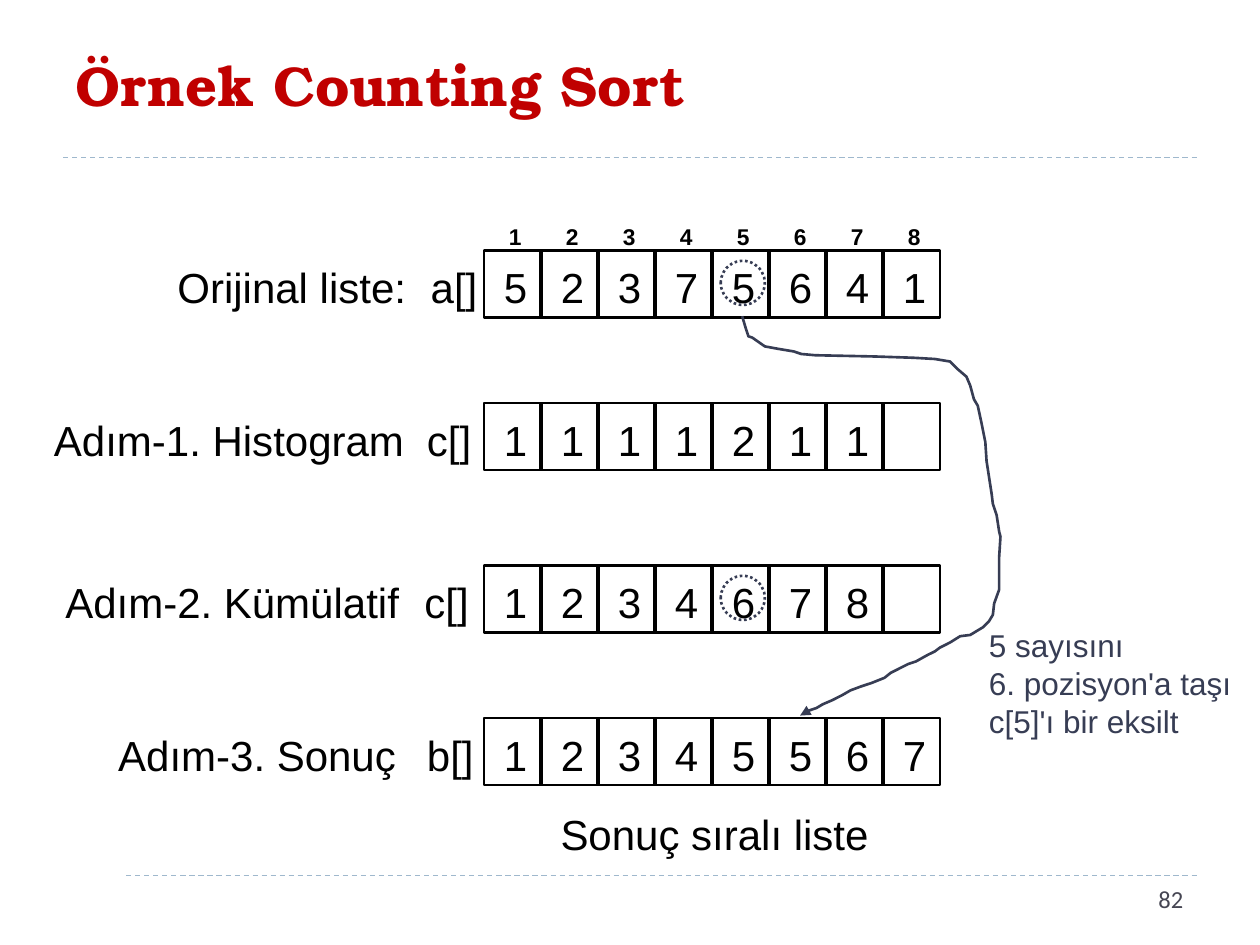
import pptx
import pptx.util
import pptx.dml.color
import pptx.enum.dml
import pptx.enum.shapes
import pptx.enum.text
import pptx.oxml.ns
from lxml import etree

Inches, Pt = pptx.util.Inches, pptx.util.Pt
DASH = pptx.enum.dml.MSO_LINE
SHAPE = pptx.enum.shapes.MSO_SHAPE
ALIGN = pptx.enum.text.PP_ALIGN
INK, NAVY = "000000", "373D54"
COLS, LEFT, CELL_W, CELL_H = 8, 3.84, 3.62 / 8, 0.53

# label, label left, label width, array name, name left, row top, values
ROWS = [
    ("Orijinal liste:", 1.31, 2.02, "a[]", 3.32, 1.99, "52375641"),
    ("Adım-1. Histogram", 0.33, 2.97, "c[]", 3.29, 3.20, "1111211"),
    ("Adım-2. Kümülatif", 0.42, 2.86, "c[]", 3.27, 4.49, "1234678"),
    ("Adım-3. Sonuç", 0.84, 2.41, "b[]", 3.29, 5.70, "12345567"),
]
MOVE_PATH = [
    (5.89, 2.51), (5.92, 2.61), (5.94, 2.67), (5.97, 2.68), (6.07, 2.75),
    (6.18, 2.77), (6.30, 2.79), (6.36, 2.81), (6.47, 2.82), (6.94, 2.83),
    (7.25, 2.84), (7.42, 2.85), (7.54, 2.87), (7.60, 2.93), (7.67, 2.99),
    (7.70, 3.06), (7.73, 3.17), (7.76, 3.22), (7.79, 3.36), (7.82, 3.51),
    (7.83, 3.66), (7.85, 3.79), (7.87, 3.92), (7.88, 4.00), (7.91, 4.09),
    (7.93, 4.22), (7.94, 4.26), (7.93, 4.42), (7.93, 4.68), (7.89, 4.79),
    (7.88, 4.88), (7.85, 4.93), (7.80, 4.98), (7.70, 5.04), (7.62, 5.05),
    (7.54, 5.10), (7.46, 5.14), (7.42, 5.17), (7.36, 5.20), (7.27, 5.25),
    (7.21, 5.27), (7.15, 5.30), (7.07, 5.34), (7.02, 5.38), (6.92, 5.42),
    (6.83, 5.45), (6.75, 5.48), (6.68, 5.52), (6.60, 5.56), (6.53, 5.59),
    (6.48, 5.62), (6.42, 5.64), (6.36, 5.66), (6.35, 5.68),
]


def rgb(hex_code):
    return pptx.dml.color.RGBColor.from_string(hex_code)


def style_font(p, size, color=INK, name="Arial", bold=False):
    p.font.size, p.font.name, p.font.bold = Pt(size), name, bold
    p.font.color.rgb = rgb(color)


def style_line(line, color, width, dash=None):
    line.color.rgb, line.width = rgb(color), Pt(width)
    if dash is not None:
        line.dash_style = dash


def add_text(s, text, x, y, w, h, size=24, color=INK, name="Arial",
             bold=False, align=ALIGN.LEFT, wrap=False):
    tf = s.shapes.add_textbox(Inches(x), Inches(y), Inches(w), Inches(h)).text_frame
    tf.word_wrap = wrap
    if not wrap:
        tf.auto_size = pptx.enum.text.MSO_AUTO_SIZE.SHAPE_TO_FIT_TEXT
    tf.text = text
    for p in tf.paragraphs:
        p.alignment = align
        style_font(p, size, color, name, bold)


def add_outline(s, kind, x, y, w, h, color, width, dash=None):
    sp = s.shapes.add_shape(kind, Inches(x), Inches(y), Inches(w), Inches(h))
    sp.shadow.inherit = False
    sp.fill.background()
    style_line(sp.line, color, width, dash)
    return sp


def add_line(s, x1, y1, x2, y2, color, width, dash=None):
    line = s.shapes.add_connector(pptx.enum.shapes.MSO_CONNECTOR.STRAIGHT,
                                  Inches(x1), Inches(y1), Inches(x2), Inches(y2))
    etree.SubElement(line._element.spPr, pptx.oxml.ns.qn("a:effectLst"))
    style_line(line.line, color, width, dash)
    return line


def add_frame(s, w, h):
    """Dashed rules, the corner block, title and page number."""
    for y in (6.95, 1.25):
        add_line(s, 0.05 * w, y, 0.95 * w, y, "9FB8CD", 0.75, DASH.DASH)
    corner = s.shapes.add_shape(SHAPE.RECTANGLE, Inches(0.35), Inches(h - 0.68),
                                Inches(0.63), Inches(0.63))
    corner.shadow.inherit = False
    corner.fill.solid()
    corner.fill.fore_color.rgb = rgb("FFFFFF")
    corner.line.fill.background()

    title = s.shapes.title
    title.left, title.top = Inches(0.05 * w), Inches(0.13)
    title.width, title.height = Inches(0.9 * w), Inches(1.08)
    title.text_frame.text = "Örnek Counting Sort"
    title.text_frame.vertical_anchor = pptx.enum.text.MSO_ANCHOR.MIDDLE
    p = title.text_frame.paragraphs[0]
    p.alignment = ALIGN.LEFT
    style_font(p, 32, "C00000", "TeX Gyre Bonum", True)
    add_text(s, "82", 7.15, 6.97, 2.34, 0.4, 14, "464653", "Calibri",
             align=ALIGN.RIGHT, wrap=True)


def add_array(s, x, y, values):
    """A row of cells with dividers and digits."""
    frame = add_outline(s, SHAPE.RECTANGLE, x, y, COLS * CELL_W, CELL_H, INK, 1.5)
    for i in range(1, COLS):
        cx = x + i * CELL_W
        divider = add_line(s, cx, y, cx, y + CELL_H, INK, 2)
        if i == COLS // 2:
            divider.begin_connect(frame, 0)
            divider.end_connect(frame, 2)
    for i, value in enumerate(values):
        add_text(s, value, x + i * CELL_W + 0.06, y + 0.04, 0.39, 0.5)


def add_move(s):
    """Circled cells, and the arrow carrying the value to its place."""
    for row in (ROWS[0], ROWS[2]):
        add_outline(s, SHAPE.OVAL, LEFT + 4 * CELL_W + 0.07, row[5] + 0.08,
                    0.35, 0.35, NAVY, 1.5, DASH.ROUND_DOT)
    start, *rest = [(Inches(x), Inches(y)) for x, y in MOVE_PATH]
    builder = s.shapes.build_freeform(*start)
    builder.add_line_segments(rest, close=False)
    curve = builder.convert_to_shape()
    curve.shadow.inherit = False
    curve.fill.background()
    style_line(curve.line, NAVY, 1.5)
    etree.SubElement(curve.line._get_or_add_ln(), pptx.oxml.ns.qn("a:tailEnd"),
                     type="triangle")
    add_text(s, "5 sayısını \v6. pozisyon'a taşı\nc[5]'ı bir eksilt",
             7.75, 4.92, 2.25, 1, 18, NAVY, wrap=True)


def main():
    prs = pptx.Presentation()
    prs.slide_width, prs.slide_height = Inches(10), Inches(7.5)
    s = prs.slides.add_slide(prs.slide_layouts[5])
    add_frame(s, 10, 7.5)

    # Array rows with their labels, in boxes a little wider than the text
    for label, label_x, label_w, name, name_x, y, values in ROWS:
        add_array(s, LEFT, y, values)
        add_text(s, label, label_x, y + 0.04, label_w + 0.02, 0.49)
        add_text(s, name, name_x, y + 0.04, 0.58, 0.5)

    # Positions above the first array
    for i in range(COLS):
        add_text(s, str(i + 1), LEFT + i * CELL_W + 0.1, 1.72, 0.28, 0.31, 13, bold=True)

    add_move(s)
    add_text(s, "Sonuç sıralı liste", 4.35, 6.37, 2.65, 0.49)
    prs.save("out.pptx")


if __name__ == "__main__":
    main()
